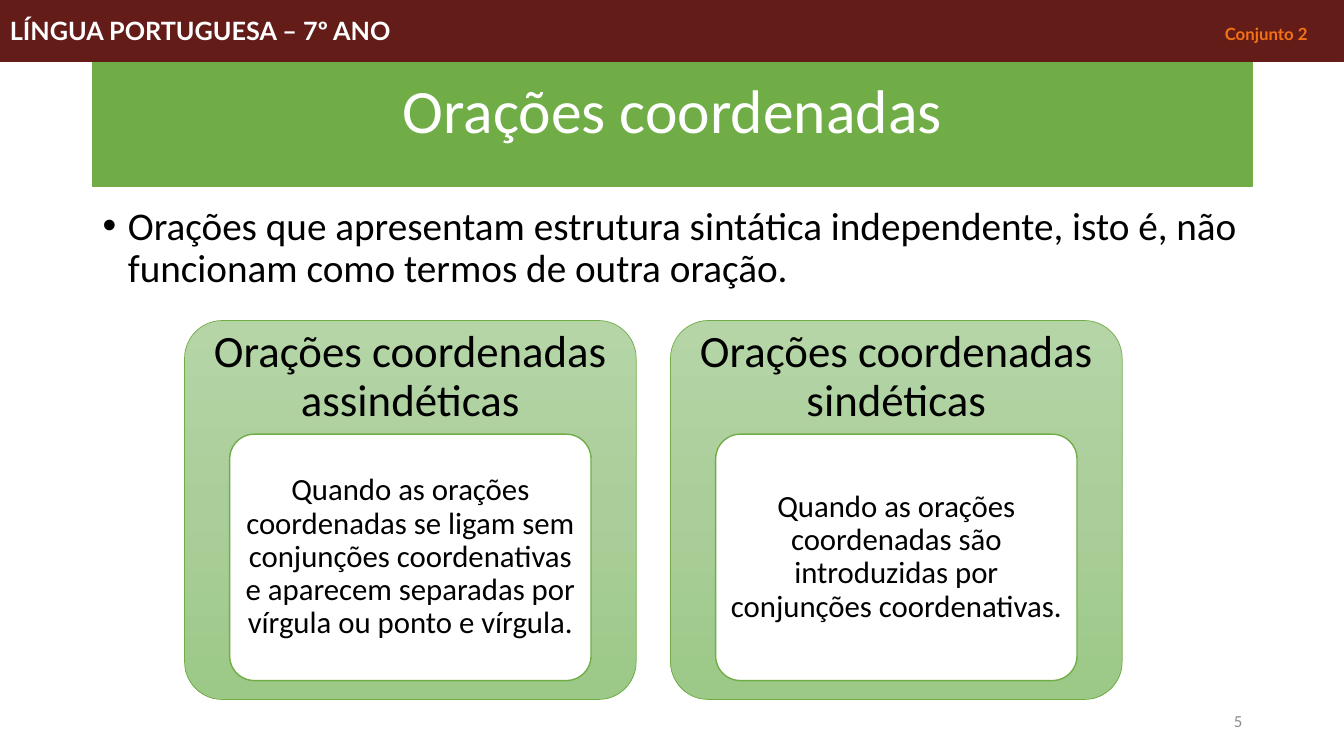
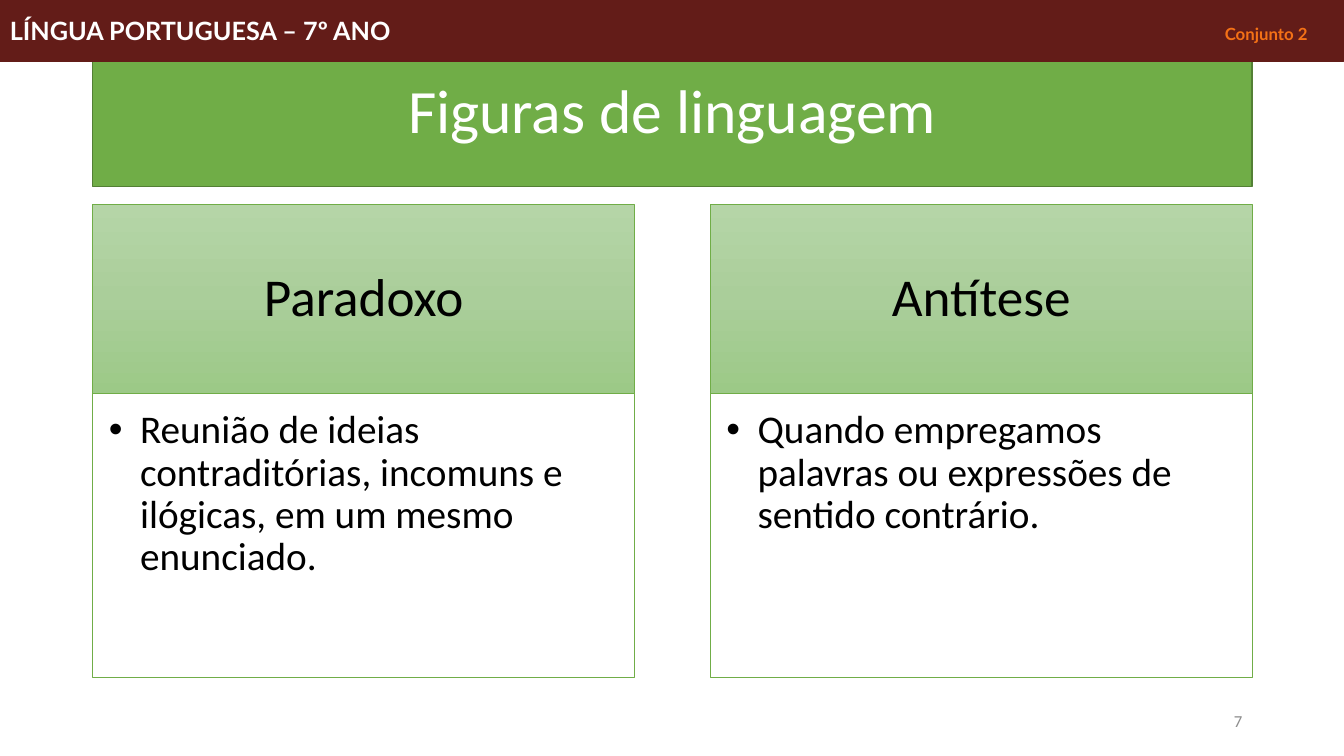
from copy import deepcopy
from dataclasses import dataclass
from typing import NamedTuple

from lxml.etree import SubElement
from pptx import Presentation
from pptx.dml.color import RGBColor
from pptx.enum.shapes import MSO_SHAPE
from pptx.enum.text import MSO_ANCHOR, PP_ALIGN
from pptx.oxml.ns import qn
from pptx.util import Inches, Pt


@dataclass(frozen=True)
class Theme:
    maroon: str = "631C18"
    orange: str = "F47116"
    green: str = "70AD47"
    dark_green: str = "538035"
    gradient: tuple = ("B5D5A7", "AACE9A", "9CC987")
    white: str = "FFFFFF"
    black: str = "000000"
    gray: str = "8C8C8C"
    font: str = "Calibri"
    band_font: str = "Lato"
    title: int = 44
    heading: int = 38
    card_heading: int = 32
    body: int = 28
    card_body: int = 22
    band: int = 18
    small: int = 12


class Box(NamedTuple):
    left: float
    top: float
    width: float
    height: float

    def share(self, left, top, width, height):
        return Box(self.left + left * self.width, self.top + top * self.height,
                   width * self.width, height * self.height)

    def columns(self, count, gap):
        width = (self.width - gap * (count - 1)) / count
        return [Box(self.left + index * (width + gap), self.top, width, self.height)
                for index in range(count)]

    def lengths(self):
        return [Inches(value) for value in self]


THEME = Theme()
SLIDE = Box(0, 0, 13.33, 7.5)
BAND = Box(0, 0, 13.33, 0.61)
TITLE = Box(0.92, 0.4, 11.5, 1.45)
INTRO = Box(0.92, 2, 11.5, 1.25)
CARDS = Box(1.83, 3.18, 9.3, 3.76)
PANELS = Box(0.92, 2.03, 11.5, 4.69)
NUMBER = Box(9.42, 6.95, 3, 0.4)
DEFAULT_INSETS = (0.1, 0.05, 0.1, 0.05)


def set_attributes(target, values):
    for name, value in values.items():
        setattr(target, name, value)


def add_span(para, text, size, color, font=THEME.font, bold=False):
    span = para.add_run()
    span.text = text
    set_attributes(span.font, {"size": Pt(size), "name": font, "bold": bold})
    span.font.color.rgb = RGBColor.from_string(color)


def start_text(shape, align=PP_ALIGN.CENTER, anchor=MSO_ANCHOR.MIDDLE,
               insets=DEFAULT_INSETS, spacing=0.9):
    frame = shape.text_frame
    margins = zip(("left", "top", "right", "bottom"), insets)
    set_attributes(frame, {
        "word_wrap": True,
        "vertical_anchor": anchor,
        **{f"margin_{side}": Inches(inset) for side, inset in margins},
    })
    para = frame.paragraphs[0]
    set_attributes(para, {"alignment": align, "line_spacing": spacing})
    return para


def add_bullet(para, indent):
    properties = para._p.get_or_add_pPr()
    properties.set("marL", str(Inches(indent)))
    properties.set("indent", str(-Inches(indent)))
    SubElement(properties, qn("a:buFont"), typeface="Arial")
    SubElement(properties, qn("a:buChar"), char="•")


def add_tab_stop(para, position):
    stops = SubElement(para._p.get_or_add_pPr(), qn("a:tabLst"))
    SubElement(stops, qn("a:tab"), pos=str(Inches(position)), algn="l")


def add_panel(page, box, fill, line, line_width=1, kind=MSO_SHAPE.RECTANGLE):
    shape = page.shapes.add_shape(kind, *box.lengths())
    shape.shadow.inherit = False
    if kind == MSO_SHAPE.ROUNDED_RECTANGLE:
        shape.adjustments[0] = 0.1
    if isinstance(fill, tuple):
        fill_gradient(shape, fill)
    else:
        shape.fill.solid()
        shape.fill.fore_color.rgb = RGBColor.from_string(fill)
    shape.line.color.rgb = RGBColor.from_string(line)
    shape.line.width = Pt(line_width)
    return shape


def fill_gradient(shape, colors):
    shape.fill.gradient()
    shape.fill.gradient_angle = 270
    stops = shape._element.spPr.find(".//" + qn("a:gsLst"))
    stops.insert(1, deepcopy(stops[0]))
    for index, (stop, color) in enumerate(zip(shape.fill.gradient_stops, colors)):
        stop.color.rgb = RGBColor.from_string(color)
        stop.position = index / (len(colors) - 1)


def add_band(page, box):
    para = start_text(add_panel(page, box, THEME.maroon, THEME.maroon, 0.75),
                      PP_ALIGN.LEFT, spacing=1.0)
    add_tab_stop(para, 12.05)
    add_span(para, "LÍNGUA PORTUGUESA – 7º ANO\t", THEME.band, THEME.white,
             THEME.band_font, True)
    add_span(para, "Conjunto 2", THEME.small, THEME.orange, THEME.band_font, True)


def add_title(page, box, text, line):
    para = start_text(add_panel(page, box, THEME.green, line))
    add_span(para, text, THEME.title, THEME.white)


def add_number(page, box, number):
    para = start_text(page.shapes.add_textbox(*box.lengths()), PP_ALIGN.RIGHT, spacing=1.0)
    add_span(para, number, THEME.small, THEME.gray)


def add_intro(page, box, text):
    para = start_text(page.shapes.add_textbox(*box.lengths()), PP_ALIGN.LEFT, MSO_ANCHOR.TOP)
    add_bullet(para, 0.25)
    add_span(para, text, THEME.body, THEME.black)


def add_card(page, box, heading, text):
    rounded = MSO_SHAPE.ROUNDED_RECTANGLE
    card = add_panel(page, box, THEME.gradient, THEME.green, 0.5, rounded)
    para = start_text(card, insets=(0.02, 0.02, 0.02, 0.7 * box.height + 0.02))
    add_span(para, heading, THEME.card_heading, THEME.black)
    inner = add_panel(page, box.share(0.1, 0.3, 0.8, 0.65), THEME.white, THEME.green,
                      kind=rounded)
    para = start_text(inner, insets=(0.06, 0.05, 0.06, 0.05))
    add_span(para, text, THEME.card_body, THEME.black)


def add_definition(page, box, heading, text):
    head_share = 0.4
    head = add_panel(page, box.share(0, 0, 1, head_share), THEME.gradient, THEME.green, 0.5)
    para = start_text(head, insets=(0.3, 0.17, 0.3, 0.17))
    add_span(para, heading, THEME.heading, THEME.black)
    detail = add_panel(page, box.share(0, head_share, 1, 1 - head_share),
                       THEME.white, THEME.green)
    para = start_text(detail, PP_ALIGN.LEFT, MSO_ANCHOR.TOP, (0.16, 0.16, 0.22, 0.24))
    add_bullet(para, 0.31)
    add_span(para, text, THEME.body, THEME.black)


def add_page(deck, title, number, line):
    page = deck.slides.add_slide(deck.slide_layouts[6])
    add_title(page, TITLE, title, line)
    add_band(page, BAND)
    add_number(page, NUMBER, number)
    return page


def add_row(page, box, gap, draw, entries):
    for column, entry in zip(box.columns(len(entries), gap), entries):
        draw(page, column, *entry)


def build_clauses(deck):
    page = add_page(deck, "Orações coordenadas", "5", THEME.green)
    add_intro(page, INTRO, "Orações que apresentam estrutura sintática independente, "
                           "isto é, não funcionam como termos de outra oração.")
    add_row(page, CARDS, 0.34, add_card, [
        ("Orações coordenadas assindéticas",
         "Quando as orações coordenadas se ligam sem conjunções coordenativas "
         "e aparecem separadas por vírgula ou ponto e vírgula."),
        ("Orações coordenadas sindéticas",
         "Quando as orações coordenadas são introduzidas por conjunções coordenativas."),
    ])


def build_figures(deck):
    page = add_page(deck, "Figuras de linguagem", "7", THEME.dark_green)
    add_row(page, PANELS, 0.75, add_definition, [
        ("Paradoxo",
         "Reunião de ideias contraditórias, incomuns e ilógicas, em um mesmo enunciado."),
        ("Antítese",
         "Quando empregamos palavras ou expressões de sentido contrário."),
    ])


def main():
    deck = Presentation()
    set_attributes(deck, {"slide_width": Inches(SLIDE.width),
                          "slide_height": Inches(SLIDE.height)})
    build_clauses(deck)
    build_figures(deck)
    deck.save("out.pptx")


if __name__ == "__main__":
    main()
